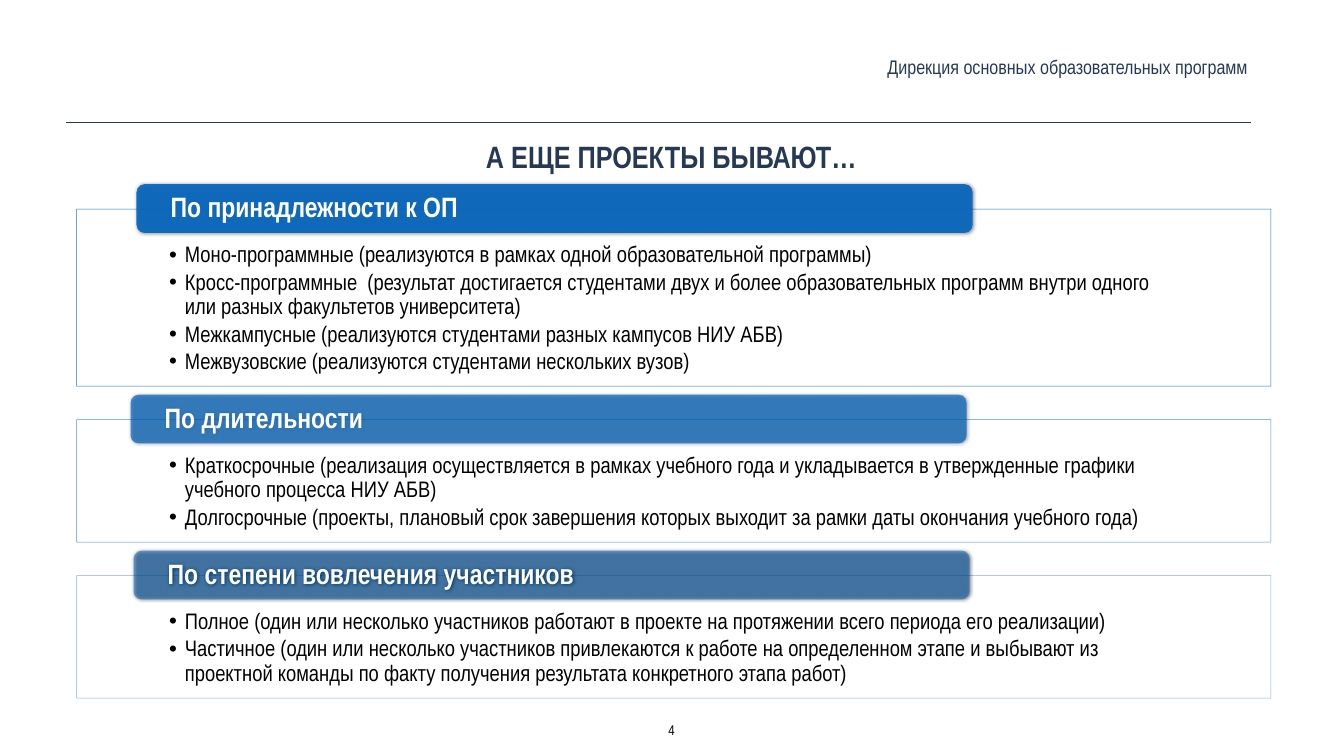
from dataclasses import dataclass

from pptx import Presentation
from pptx.dml.color import RGBColor
from pptx.enum.shapes import MSO_CONNECTOR, MSO_SHAPE
from pptx.enum.text import MSO_ANCHOR, PP_ALIGN
from pptx.oxml.ns import qn
from pptx.util import Cm, Pt
from lxml import etree

RECT, ROUND = MSO_SHAPE.RECTANGLE, MSO_SHAPE.ROUNDED_RECTANGLE
STRAIGHT = MSO_CONNECTOR.STRAIGHT
TOP, MIDDLE = MSO_ANCHOR.TOP, MSO_ANCHOR.MIDDLE
LEFT, CENTER, RIGHT = PP_ALIGN.LEFT, PP_ALIGN.CENTER, PP_ALIGN.RIGHT

FONT = "Arial Narrow"
NAVY, BLUE, WHITE, BLACK = "253957", "0365C0", "FFFFFF", "000000"
PANEL_LEFT, PANEL_TOP, PANEL_WIDTH, PANEL_GAP = 3.86, 10.54, 60.2, 1.69
TAB_WIDTH, TAB_HEIGHT, TAB_RISE = 42.14, 2.46, 1.26
PAD = (0.2, 0.2, 0.2, 0.2)


@dataclass
class Section:
    title: str
    items: list[str]
    tab_left: float
    height: float
    opacity: int


@dataclass
class Label:
    text: str
    box: tuple[float, float, float, float]
    size: int
    color: str
    align: PP_ALIGN
    anchor: MSO_ANCHOR = TOP
    bold: bool = False
    wrap: bool = True


SECTIONS = [
    Section("По принадлежности к ОП", [
        "Моно-программные (реализуются в рамках одной образовательной программы)",
        "Кросс-программные  (результат достигается студентами двух и более образовательных "
        "программ внутри одного или разных факультетов университета)",
        "Межкампусные (реализуются студентами разных кампусов НИУ АБВ)",
        "Межвузовские (реализуются студентами нескольких вузов)",
    ], 6.88, 8.92, 90),
    Section("По длительности", [
        "Краткосрочные (реализация осуществляется в рамках учебного года и укладывается "
        "в утвержденные графики учебного процесса НИУ АБВ)",
        "Долгосрочные (проекты, плановый срок завершения которых выходит за рамки даты "
        "окончания учебного года)",
    ], 6.58, 6.17, 70),
    Section("По степени вовлечения участников", [
        "Полное (один или несколько участников работают в проекте на протяжении всего "
        "периода его реализации)",
        "Частичное (один или несколько участников привлекаются к работе на определенном "
        "этапе и выбывают из проектной команды по факту получения результата конкретного "
        "этапа работ)",
    ], 6.73, 6.17, 50),
]

LABELS = [
    Label("А ЕЩЕ ПРОЕКТЫ БЫВАЮТ…", (0.74, 6.73, 66.22, 1.93), 44, NAVY, CENTER, bold=True),
    Label("Дирекция основных образовательных программ", (31.5, 2.54, 31.57, 1.6),
          28, NAVY, RIGHT, MIDDLE),
    Label("4", (33.45, 36.14, 0.79, 1.24), 20, BLACK, CENTER, wrap=False),
]


def rgb(value: str) -> RGBColor:
    return RGBColor.from_string(value)


def apply(target, values: dict) -> None:
    for name, value in values.items():
        setattr(target, name, value)


def set_alpha(color, percent: int) -> None:
    etree.SubElement(color, qn("a:alpha"), val=str(percent * 1000))


def set_frame(tf, insets: tuple, anchor: MSO_ANCHOR, wrap: bool = True) -> None:
    left, top, right, bottom = (Cm(v) for v in insets)
    apply(tf, {"margin_left": left, "margin_top": top, "margin_right": right,
               "margin_bottom": bottom, "vertical_anchor": anchor, "word_wrap": wrap})


def write(p, text: str, size: int, color: str, align: PP_ALIGN, bold: bool = False) -> None:
    p.alignment = align
    r = p.add_run()
    r.text = text
    apply(r.font, {"name": FONT, "size": Pt(size), "bold": bold})
    r.font.color.rgb = rgb(color)


def add_label(s, label: Label) -> None:
    tf = s.shapes.add_textbox(*(Cm(v) for v in label.box)).text_frame
    set_frame(tf, PAD, label.anchor, label.wrap)
    write(tf.paragraphs[0], label.text, label.size, label.color, label.align, label.bold)


def add_rule(s, x1: float, x2: float, y: float) -> None:
    line = s.shapes.add_connector(STRAIGHT, Cm(x1), Cm(y), Cm(x2), Cm(y))
    line.line.color.rgb = rgb(NAVY)
    line.line.width = Pt(1)
    etree.SubElement(line._element.spPr, qn("a:effectLst"))


def add_box(s, kind: MSO_SHAPE, box: tuple, fill: str):
    sp = s.shapes.add_shape(kind, *(Cm(v) for v in box))
    sp.shadow.inherit = False
    sp.fill.solid()
    sp.fill.fore_color.rgb = rgb(fill)
    return sp


def add_shadow(sp) -> None:
    effects = sp._element.spPr.find(qn("a:effectLst"))
    shadow = etree.SubElement(effects, qn("a:outerShdw"), blurRad=str(Pt(5)),
                              dist=str(Pt(1)), dir="0", rotWithShape="0")
    set_alpha(etree.SubElement(shadow, qn("a:srgbClr"), val=BLACK), 50)


def set_bullet(p) -> None:
    apply(p, {"line_spacing": 0.9, "space_after": Pt(4.8)})
    pPr = p._p.get_or_add_pPr()
    apply_indent = {"marL": Cm(0.79), "indent": -Cm(0.79)}
    for name, value in apply_indent.items():
        pPr.set(name, str(value))
    etree.SubElement(pPr, qn("a:buFont"), typeface="Arial")
    etree.SubElement(pPr, qn("a:buChar"), char="•")


def add_panel(s, section: Section, top: float) -> None:
    sp = add_box(s, RECT, (PANEL_LEFT, top, PANEL_WIDTH, section.height), WHITE)
    sp.line.color.rgb = rgb(BLUE)
    sp.line.width = Pt(0.75)
    fill, line = sp._element.spPr.iter(qn("a:srgbClr"))
    set_alpha(fill, 90)
    set_alpha(line, section.opacity)
    tf = sp.text_frame
    set_frame(tf, (4.67, 1.73, 4.67, 0.64), TOP)
    for i, item in enumerate(section.items):
        p = tf.add_paragraph() if i else tf.paragraphs[0]
        write(p, item, 32, BLACK, LEFT)
        set_bullet(p)


def add_tab(s, section: Section, top: float) -> None:
    sp = add_box(s, ROUND, (section.tab_left, top, TAB_WIDTH, TAB_HEIGHT), BLUE)
    sp.line.fill.background()
    for color in sp._element.spPr.iter(qn("a:srgbClr")):
        set_alpha(color, section.opacity)
    add_shadow(sp)
    tf = sp.text_frame
    set_frame(tf, (1.6, 0, 1.6, 0), MIDDLE)
    write(tf.paragraphs[0], section.title, 40, WHITE, LEFT, True)
    tf.paragraphs[0].line_spacing = 0.9


def main() -> None:
    prs = Presentation()
    apply(prs, {"slide_width": Cm(67.74), "slide_height": Cm(38.1)})
    s = prs.slides.add_slide(prs.slide_layouts[6])
    for label in LABELS:
        add_label(s, label)
    add_rule(s, 3.33, 63.07, 6.15)
    top = PANEL_TOP
    for section in SECTIONS:
        add_panel(s, section, top)
        add_tab(s, section, top - TAB_RISE)
        top += section.height + PANEL_GAP
    prs.save("out.pptx")


if __name__ == "__main__":
    main()
